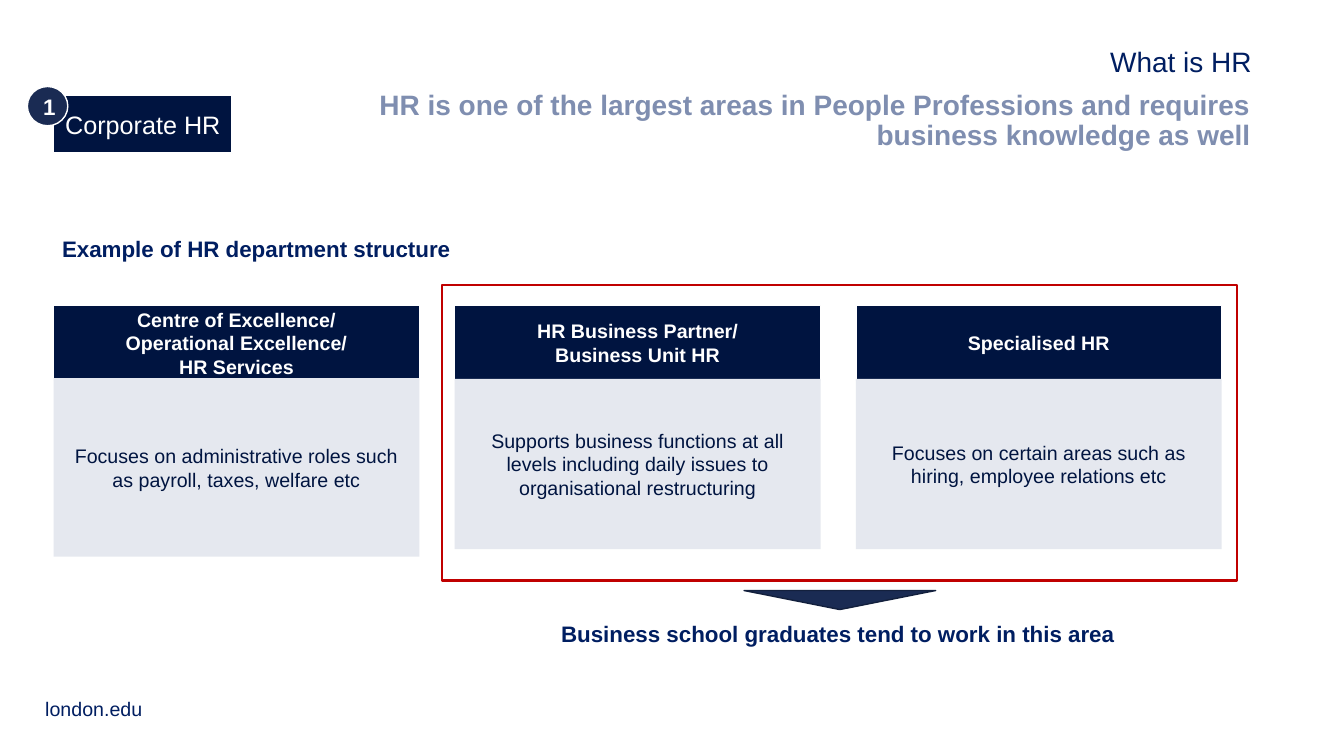
from pptx import Presentation
from pptx import util as u
from pptx.dml.color import RGBColor
from pptx.enum import shapes, text

HUES = {"ink": "001E61", "navy": "001440", "slate": "1A2B53", "edge": "13203D",
        "pale": "E5E8EF", "haze": "7F8EB0", "red": "C00000", "white": "FFFFFF"}
FONT = "Arial"
KIND, SIDE, ANCHOR = shapes.MSO_SHAPE, text.PP_ALIGN, text.MSO_ANCHOR

# Column heading lines, body text, body top and body height (cm)
TEAMS = [
    (["Centre of Excellence/", "Operational Excellence/", "HR Services"],
     "Focuses on administrative roles such as payroll, taxes, welfare etc", 9.53, 4.5),
    (["HR Business Partner/", "Business Unit HR"],
     "Supports business functions at all levels including daily issues to "
     "organisational restructuring", 9.55, 4.29),
    (["Specialised HR"],
     "Focuses on certain areas such as hiring, employee relations etc", 9.55, 4.29),
]
# Text, box (cm), size, colour, bold, alignment, left inset, right inset, line spacing
NOTES = [
    ("Example of HR department structure", (1.19, 5.79, 10.54, 0.94),
     16, "ink", True, SIDE.CENTER, 0.25, 0.25, 1),
    ("Business school graduates tend to work in this area", (13.89, 15.49, 14.66, 0.94),
     16, "ink", True, SIDE.LEFT, 0.25, 0.25, 1),
    ("What is HR", (8.84, 1.09, 22.71, 1.09),
     20, "ink", False, SIDE.RIGHT, 0.25, 0, 0.9),
    ("HR is one of the largest areas in People Professions and requires "
     "business knowledge as well", (7.19, 2.18, 24.33, 0.81),
     20, "haze", True, SIDE.RIGHT, 0.25, 0, 0.9),
]
FOOTER = ("london.edu", (1.14, 17.15, 9.45, 1.14),
          14, "ink", False, SIDE.LEFT, 0, 0.25, 0.9)
LEFT, STEP, WIDTH = 1.35, 10.11, 9.22
HEAD_TOP, HEAD_HIGH = 7.7, 1.88


def hue(name):
    return RGBColor.from_string(HUES[name])


def write(frame, lines, size, color, bold=False, side=SIDE.CENTER, gap=1):
    frame.word_wrap = True
    frame.text = "\n".join(lines)
    for para in frame.paragraphs:
        para.alignment, para.line_spacing = side, gap
        for run in para.runs:
            font = run.font
            font.name, font.size, font.bold = FONT, u.Pt(size), bold
            font.color.rgb = hue(color)


def draw(slide, kind, box, fill=None, line=None, weight=1):
    shape = slide.shapes.add_shape(kind, *map(u.Cm, box))
    shape.shadow.inherit = False
    if fill:
        shape.fill.solid()
        shape.fill.fore_color.rgb = hue(fill)
    else:
        shape.fill.background()
    if line:
        shape.line.color.rgb = hue(line)
        shape.line.width = u.Pt(weight)
    else:
        shape.line.fill.background()
    shape.text_frame.vertical_anchor = ANCHOR.MIDDLE
    return shape


def note(slide, words, box, size, color, bold, side, left, right, gap):
    frame = slide.shapes.add_textbox(*map(u.Cm, box)).text_frame
    frame.margin_left, frame.margin_right = u.Cm(left), u.Cm(right)
    write(frame, [words], size, color, bold, side, gap)
    return frame


def main():
    deck = Presentation()
    deck.slide_width, deck.slide_height = u.Cm(33.87), u.Cm(19.05)
    slide = deck.slides.add_slide(deck.slide_layouts[6])

    note(slide, *FOOTER).vertical_anchor = ANCHOR.BOTTOM
    for i, (title, words, top, high) in enumerate(TEAMS):
        x = LEFT + i * STEP
        head = draw(slide, KIND.RECTANGLE, (x, HEAD_TOP, WIDTH, HEAD_HIGH), "navy", "white")
        write(head.text_frame, title, 14, "white", True)
        body = draw(slide, KIND.RECTANGLE, (x, top, WIDTH, high), "pale")
        write(body.text_frame, [words], 14, "navy")

    draw(slide, KIND.RECTANGLE, (11.13, 7.19, 20.04, 7.44), line="red", weight=1.5)
    arrow = draw(slide, KIND.ISOSCELES_TRIANGLE, (18.75, 14.88, 4.83, 0.48), "slate", "edge")
    arrow.rotation = 180
    for item in NOTES:
        note(slide, *item)

    tag = draw(slide, KIND.RECTANGLE, (LEFT, 2.39, 4.5, 1.47), "navy", "white")
    write(tag.text_frame, ["Corporate HR"], 18, "white")
    badge = draw(slide, KIND.OVAL, (0.69, 2.18, 1.02, 0.99), "slate", "white")
    write(badge.text_frame, ["1"], 16, "white", True)
    deck.save("out.pptx")


if __name__ == "__main__":
    main()
